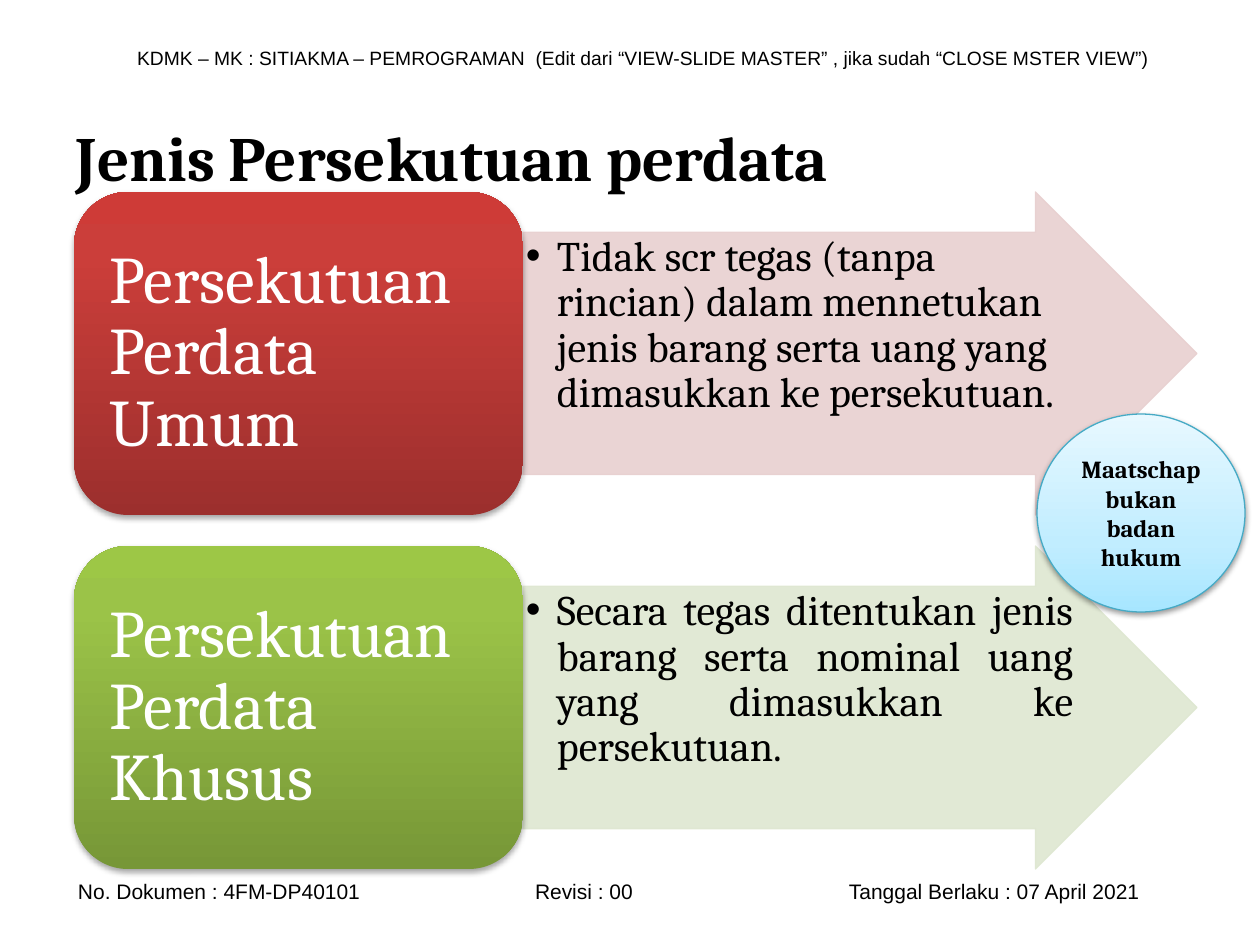
"""Build the slide on the kinds of civil partnership."""
from lxml import etree
from pptx import Presentation
from pptx.dml.color import RGBColor
from pptx.enum.shapes import MSO_SHAPE
from pptx.enum.text import MSO_ANCHOR, MSO_AUTO_SIZE, PP_ALIGN
from pptx.oxml.ns import qn
from pptx.util import Pt

LEFT, CENTER, JUSTIFY = PP_ALIGN.LEFT, PP_ALIGN.CENTER, PP_ALIGN.JUSTIFY
TOP, MIDDLE = MSO_ANCHOR.TOP, MSO_ANCHOR.MIDDLE
ARROW, ROUNDED, OVAL = MSO_SHAPE.RIGHT_ARROW, MSO_SHAPE.ROUNDED_RECTANGLE, MSO_SHAPE.OVAL

HEADER = ("KDMK – MK : SITIAKMA – PEMROGRAMAN  (Edit dari “VIEW-SLIDE MASTER” , "
          "jika sudah “CLOSE MSTER VIEW”)")
FOOTER = ["No. Dokumen : 4FM-DP40101", "Revisi : 00", "Tanggal Berlaku : 07 April 2021"]
FOOTER_TABS = [457, 771]
TITLE = "Jenis Persekutuan perdata"
KINDS = [
    {"label": "Persekutuan Perdata Umum",
     "detail": "Tidak scr tegas (tanpa rincian) dalam mennetukan jenis barang "
               "serta uang yang dimasukkan ke persekutuan.",
     "align": LEFT, "tint": "E8D0D0",
     "stops": [(0, "9C2F2D"), (80, "CB3E3A"), (100, "CE3B37")]},
    {"label": "Persekutuan Perdata Khusus",
     "detail": "Secara tegas ditentukan jenis barang serta nominal uang yang "
               "dimasukkan ke persekutuan.",
     "align": JUSTIFY, "tint": "DEE7D1",
     "stops": [(0, "779737"), (80, "9BC348"), (100, "9DC746")]},
]
NOTE = "Maatschap bukan badan hukum"
NOTE_STOPS = [(0, "A7E6FF"), (35, "C1EDFF"), (100, "E7F8FF")]

ROW_TOP, ROW_HEIGHT, ROW_STEP = 192, 323, 354
LABEL_LEFT, LABEL_WIDTH, ARROW_WIDTH = 74, 449, 674
ARROW_LEFT = LABEL_LEFT + LABEL_WIDTH
SHAFT = 0.75


def px(n):
    return round(n * 914400 / 126)


def rgb(value):
    return RGBColor.from_string(value)


def box(*lengths):
    return [px(n) for n in lengths]


def place(sp, *lengths):
    sp.left, sp.top, sp.width, sp.height = box(*lengths)


def write(sp, text, size, font="Cambria", color="000000", bold=False, align=LEFT,
          anchor=MIDDLE, insets=(13, 6), spacing=1.0):
    tf = sp.text_frame
    tf.word_wrap = True
    tf.auto_size = MSO_AUTO_SIZE.NONE
    tf.vertical_anchor = anchor
    tf.margin_left = tf.margin_right = px(insets[0])
    tf.margin_top = tf.margin_bottom = px(insets[1])
    p = tf.paragraphs[0]
    p.alignment = align
    p.line_spacing = spacing
    p.space_before = p.space_after = Pt(0)
    r = p.add_run()
    r.text = text
    r.font.name, r.font.size, r.font.bold = font, Pt(size), bold
    r.font.color.rgb = rgb(color)
    return p


def add_shape(kind, *lengths):
    s = slide.shapes.add_shape(kind, *box(*lengths))
    s.shadow.inherit = False
    return s


def fill_gradient(s, stops):
    s.fill.gradient()
    s.fill.gradient_angle = 90
    gs_list = s._element.spPr.find(".//" + qn("a:gsLst"))
    for gs in list(gs_list):
        gs_list.remove(gs)
    for position, color in stops:
        gs = etree.SubElement(gs_list, qn("a:gs"), pos=str(position * 1000))
        etree.SubElement(gs, qn("a:srgbClr"), val=color)


def add_shadow(s, alpha, distance):
    effects = s._element.spPr.find(qn("a:effectLst"))
    shadow = etree.SubElement(effects, qn("a:outerShdw"), blurRad="40000",
                              dist=str(distance), dir="5400000", rotWithShape="0")
    color = etree.SubElement(shadow, qn("a:srgbClr"), val="000000")
    etree.SubElement(color, qn("a:alpha"), val=str(alpha * 1000))


def add_arrow(top, tint):
    s = add_shape(ARROW, ARROW_LEFT, top, ARROW_WIDTH, ROW_HEIGHT)
    s.adjustments[0] = SHAFT
    s.fill.solid()
    s.fill.fore_color.rgb = s.line.color.rgb = rgb(tint)
    s.line.width = Pt(0.75)
    for color in s._element.spPr.iter(qn("a:srgbClr")):
        etree.SubElement(color, qn("a:alpha"), val="90000")


def add_detail(sp, top, kind):
    slide.shapes._spTree.append(sp._element)
    place(sp, ARROW_LEFT, top + ROW_HEIGHT * (1 - SHAFT) / 2, 553, ROW_HEIGHT * SHAFT)
    p = write(sp, kind["detail"], 24, align=kind["align"], anchor=TOP,
              insets=(3, 3), spacing=0.9)
    pPr = p._p.get_or_add_pPr()
    pPr.set("marL", str(px(31)))
    pPr.set("indent", str(-px(31)))


def add_label(top, kind):
    s = add_shape(ROUNDED, LABEL_LEFT, top, LABEL_WIDTH, ROW_HEIGHT)
    fill_gradient(s, kind["stops"])
    s.line.fill.background()
    add_shadow(s, 35, 23000)
    write(s, kind["label"], 38, color="FFFFFF", insets=(20, 10), spacing=0.9)


prs = Presentation()
prs.slide_width, prs.slide_height = box(1260, 945)
slide = prs.slides.add_slide(prs.slide_layouts[3])
title, *details = slide.placeholders

header = slide.shapes.add_textbox(*box(124, 39, 1052, 37))
write(header, HEADER, 11, font="Arial", align=JUSTIFY)
footer = slide.shapes.add_textbox(*box(65, 872, 1150, 38))
p = write(footer, "\t".join(FOOTER), 12, font="Arial")
tabs = etree.SubElement(p._p.get_or_add_pPr(), qn("a:tabLst"))
for stop in FOOTER_TABS:
    etree.SubElement(tabs, qn("a:tab"), pos=str(px(stop)), algn="l")

place(title, 63, 77, 1134, 158)
write(title, TITLE, 36, bold=True)

for i, (kind, detail) in enumerate(zip(KINDS, details)):
    top = ROW_TOP + i * ROW_STEP
    add_arrow(top, kind["tint"])
    add_detail(detail, top, kind)
    add_label(top, kind)

note = add_shape(OVAL, 1037, 414, 208, 198)
fill_gradient(note, NOTE_STOPS)
note.line.color.rgb = rgb("46AAC5")
note.line.width = Pt(0.75)
add_shadow(note, 38, 20000)
write(note, NOTE, 14, bold=True, align=CENTER)

prs.save("out.pptx")
